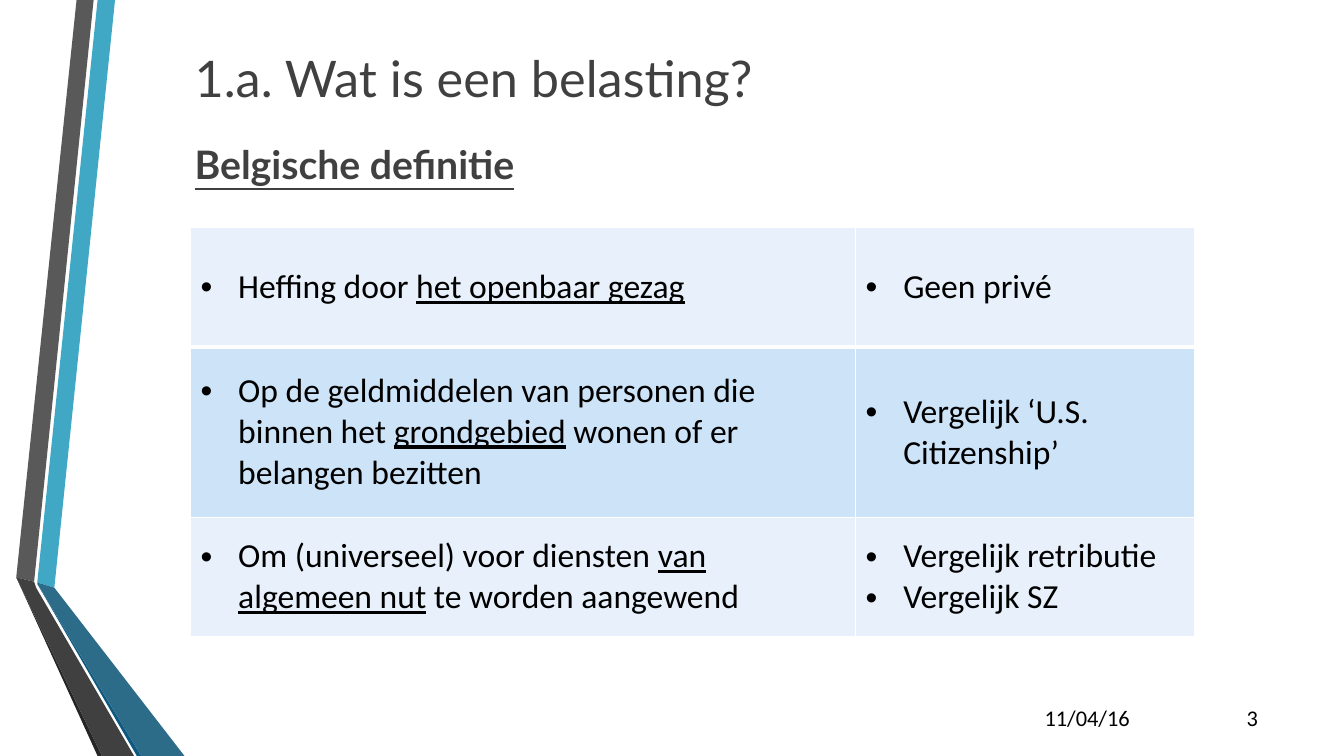
"""Builds the slide that breaks down the Belgian definition of a tax."""
from dataclasses import dataclass

from lxml import etree
from pptx import Presentation
from pptx import util as u
from pptx.dml import color
from pptx.enum import text
from pptx.oxml import ns


@dataclass(frozen=True)
class Theme:
    heading_font: str = "Lato"
    body_font: str = "Calibri"
    heading: str = "404040"
    ink: str = "000000"
    border: str = "FFFFFF"
    pale: str = "E8F1FB"
    sky: str = "CDE3F8"
    title_size: int = 36
    subtitle_size: int = 28
    cell_size: int = 24
    footer_size: int = 16


@dataclass(frozen=True)
class Box:
    left: float
    top: float
    width: float
    height: float

    def emu(self) -> tuple[u.Cm, ...]:
        return tuple(u.Cm(v) for v in (self.left, self.top, self.width, self.height))


@dataclass(frozen=True)
class Ribbon:
    fill: str
    corners: tuple[tuple[float, float], ...]


@dataclass(frozen=True)
class Phrase:
    wording: str
    underlined: bool = False


@dataclass(frozen=True)
class Criterion:
    height: float
    fill: str
    definition: tuple[Phrase, ...]
    contrasts: tuple[str, ...]


@dataclass(frozen=True)
class Footer:
    wording: str
    box: Box
    align: text.PP_ALIGN


THEME = Theme()
COLUMN_WIDTHS = (16.76, 8.54)
BULLET_INDENT = 0.95
THIN, THICK = 1, 3

RIBBONS = (
    Ribbon("40A8C5", ((0.94, 14.68), (1.37, 14.81), (2.9, 0), (2.46, 0))),
    Ribbon("595959", ((2.36, 0), (1.93, 0), (0.41, 14.55), (0.86, 14.66))),
    Ribbon("262626", ((0.41, 14.55), (2.46, 19.05), (2.57, 19.05))),
    Ribbon("0C5A82", ((0.94, 14.71), (3.45, 19.05), (3.56, 19.05))),
    Ribbon("2D6C88", ((0.94, 14.68), (0.94, 14.71), (3.56, 19.05), (4.65, 19.05), (1.37, 14.81))),
    Ribbon("404040", ((3.38, 19.05), (0.91, 14.81), (0.86, 14.66), (0.41, 14.55), (2.57, 19.05))),
)

CRITERIA = (
    Criterion(3, THEME.pale,
              (Phrase("Heffing door "), Phrase("het openbaar gezag", True)),
              ("Geen privé",)),
    Criterion(4.3, THEME.sky,
              (Phrase("Op de geldmiddelen van personen die binnen het "),
               Phrase("grondgebied", True),
               Phrase(" wonen of er belangen bezitten")),
              ("Vergelijk ‘U.S. Citizenship’",)),
    Criterion(3, THEME.pale,
              (Phrase("Om (universeel) voor diensten "),
               Phrase("van algemeen nut", True),
               Phrase(" te worden aangewend")),
              ("Vergelijk retributie", "Vergelijk SZ")),
)

FOOTERS = (
    Footer("11/04/16", Box(25.81, 17.53, 3.18, 1.02), text.PP_ALIGN.CENTER),
    Footer("3", Box(30.43, 17.53, 1.52, 1.02), text.PP_ALIGN.RIGHT),
)


def style_font(font: text, name: str, size: int, ink: str) -> None:
    font.name = name
    font.size = u.Pt(size)
    font.color.rgb = color.RGBColor.from_string(ink)


def draw_ribbon(slide, ribbon: Ribbon) -> None:
    start, *rest = [(u.Cm(x), u.Cm(y)) for x, y in ribbon.corners]
    outline = slide.shapes.build_freeform(*start)
    outline.add_line_segments(rest, close=True)
    band = outline.convert_to_shape()
    band.shadow.inherit = False
    band.fill.solid()
    band.fill.fore_color.rgb = color.RGBColor.from_string(ribbon.fill)
    band.line.fill.background()


def set_bullet(paragraph, indent: float, mark: str = "") -> None:
    props = paragraph._p.get_or_add_pPr()
    props.set("marL", str(u.Cm(indent)))
    props.set("indent", str(-u.Cm(indent)))
    if mark:
        etree.SubElement(props, ns.qn("a:buFont"), typeface="Arial")
        etree.SubElement(props, ns.qn("a:buChar"), char=mark)
    else:
        etree.SubElement(props, ns.qn("a:buNone"))


def fill_heading(holder, wording: str, box: Box, size: int, anchor: text.MSO_ANCHOR):
    holder.left, holder.top, holder.width, holder.height = box.emu()
    frame = holder.text_frame
    frame.text = wording
    frame.word_wrap = True
    frame.auto_size = text.MSO_AUTO_SIZE.NONE
    frame.vertical_anchor = anchor
    line = frame.paragraphs[0]
    set_bullet(line, 0)
    line.alignment = text.PP_ALIGN.LEFT
    line.space_before = u.Pt(0)
    font = line.runs[0].font
    style_font(font, THEME.heading_font, size, THEME.heading)
    return font


def set_borders(cell, top: int, bottom: int) -> None:
    props = cell._tc.get_or_add_tcPr()
    for side, width in (("L", THIN), ("R", THIN), ("T", top), ("B", bottom)):
        edge = etree.SubElement(props, ns.qn(f"a:ln{side}"), w=str(u.Pt(width)))
        paint = etree.SubElement(edge, ns.qn("a:solidFill"))
        etree.SubElement(paint, ns.qn("a:srgbClr"), val=THEME.border)


def fill_cell(cell, points: list[tuple[Phrase, ...]], fill: str) -> None:
    cell.fill.solid()
    cell.fill.fore_color.rgb = color.RGBColor.from_string(fill)
    cell.vertical_anchor = text.MSO_ANCHOR.MIDDLE
    frame = cell.text_frame
    frame.text = "\n".join("".join(p.wording for p in point) for point in points)
    for paragraph, point in zip(frame.paragraphs, points):
        set_bullet(paragraph, BULLET_INDENT, "•")
        paragraph.text = point[0].wording
        for phrase in point[1:]:
            paragraph.add_run().text = phrase.wording
        for run, phrase in zip(paragraph.runs, point):
            style_font(run.font, THEME.body_font, THEME.cell_size, THEME.ink)
            run.font.underline = phrase.underlined


def draw_criteria(slide, criteria: tuple[Criterion, ...]) -> None:
    box = Box(4.8, 5.74, sum(COLUMN_WIDTHS), sum(c.height for c in criteria))
    grid = slide.shapes.add_table(len(criteria), len(COLUMN_WIDTHS), *box.emu()).table
    grid.first_row = grid.horz_banding = False
    for column, width in zip(grid.columns, COLUMN_WIDTHS):
        column.width = u.Cm(width)
    for index, (row, criterion) in enumerate(zip(grid.rows, criteria)):
        row.height = u.Cm(criterion.height)
        contrasts = [(Phrase(c),) for c in criterion.contrasts]
        for cell, points in zip(row.cells, ([criterion.definition], contrasts)):
            set_borders(cell, THICK if index == 1 else THIN, THICK if index == 0 else THIN)
            fill_cell(cell, points, criterion.fill)


def draw_footer(slide, footer: Footer) -> None:
    frame = slide.shapes.add_textbox(*footer.box.emu()).text_frame
    frame.text = footer.wording
    frame.word_wrap = True
    frame.vertical_anchor = text.MSO_ANCHOR.BOTTOM
    line = frame.paragraphs[0]
    line.alignment = footer.align
    style_font(line.runs[0].font, THEME.body_font, THEME.footer_size, THEME.ink)


def main() -> None:
    deck = Presentation()
    deck.slide_width, deck.slide_height = u.Cm(33.87), u.Cm(19.05)
    slide = deck.slides.add_slide(deck.slide_layouts[1])
    for ribbon in RIBBONS:
        draw_ribbon(slide, ribbon)
    title, subtitle = slide.placeholders
    fill_heading(title, "1.a. Wat is een belasting?", Box(4.65, 0.99, 27.3, 1.9),
                 THEME.title_size, text.MSO_ANCHOR.MIDDLE)
    definition = fill_heading(subtitle, "Belgische definitie", Box(4.65, 3.4, 26.34, 12.73),
                              THEME.subtitle_size, text.MSO_ANCHOR.TOP)
    definition.bold = definition.underline = True
    draw_criteria(slide, CRITERIA)
    for footer in FOOTERS:
        draw_footer(slide, footer)
    deck.save("out.pptx")


if __name__ == "__main__":
    main()
